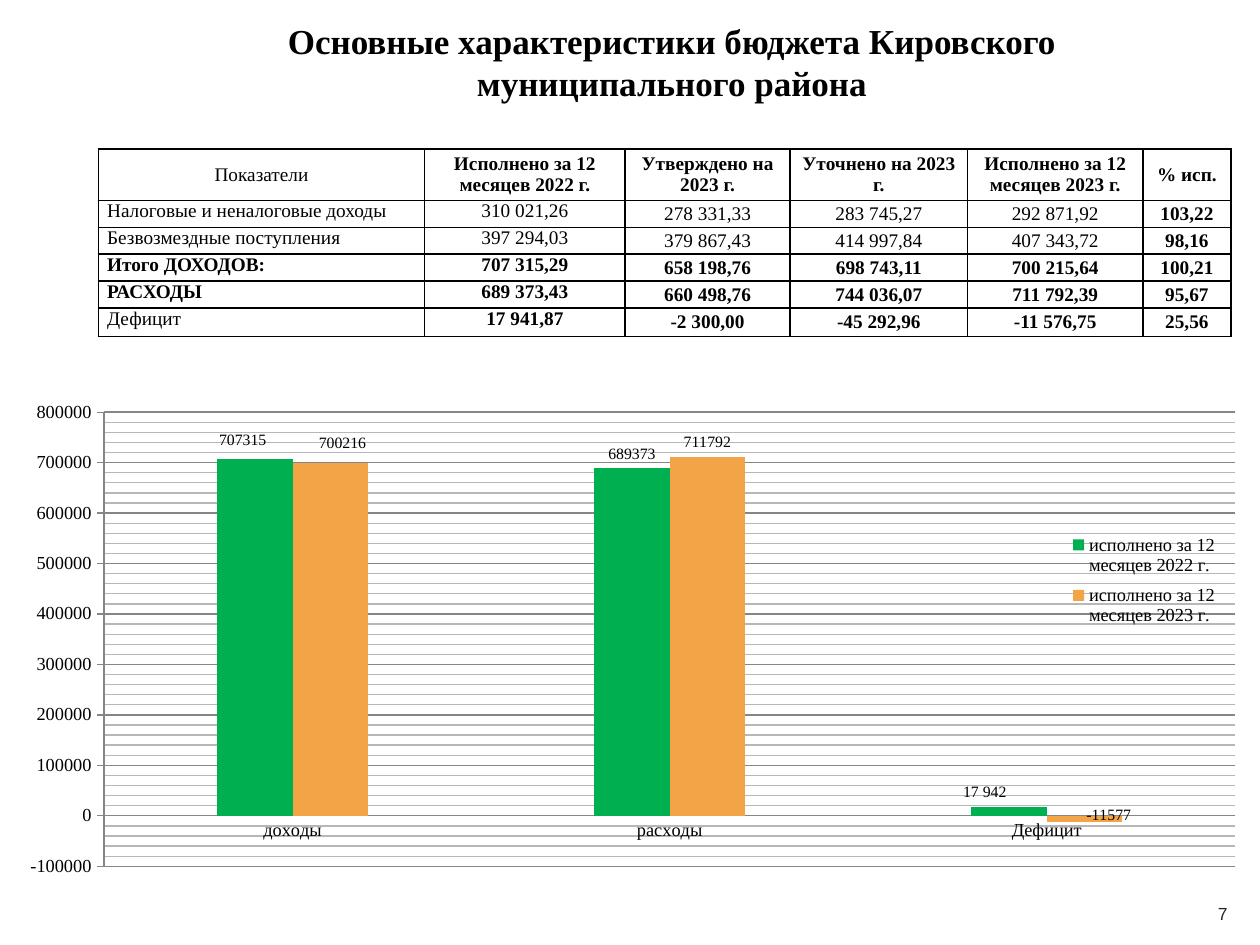
from lxml import etree
from pptx import Presentation
from pptx.chart.data import CategoryChartData
from pptx.dml.color import RGBColor
from pptx.enum.chart import XL_CHART_TYPE, XL_LABEL_POSITION, XL_LEGEND_POSITION, XL_TICK_MARK
from pptx.enum.text import MSO_ANCHOR, MSO_AUTO_SIZE, PP_ALIGN
from pptx.oxml import parse_xml
from pptx.oxml.ns import nsdecls, qn
from pptx.util import Pt

BLACK = RGBColor(0x00, 0x00, 0x00)
DARK = RGBColor(0x26, 0x26, 0x26)
GREEN = RGBColor(0x00, 0xB0, 0x50)
ORANGE = RGBColor(0xF3, 0xA4, 0x47)
MAJOR_GRAY = RGBColor(0x86, 0x86, 0x86)
MINOR_GRAY = RGBColor(0xB7, 0xB7, 0xB7)
SERIF = "Times New Roman"
SANS = "Arial"
CENTER, JUSTIFY = PP_ALIGN.CENTER, PP_ALIGN.JUSTIFY
TOP, MIDDLE = MSO_ANCHOR.TOP, MSO_ANCHOR.MIDDLE
NO_AUTOFIT = MSO_AUTO_SIZE.NONE
CLUSTERED = XL_CHART_TYPE.COLUMN_CLUSTERED
OUTSIDE_END = XL_LABEL_POSITION.OUTSIDE_END
LEGEND_RIGHT = XL_LEGEND_POSITION.RIGHT
TICK_NONE, TICK_CROSS = XL_TICK_MARK.NONE, XL_TICK_MARK.CROSS

COLUMN_WIDTHS = [186.5, 114.5, 94.3, 101.5, 100.1, 50.4]
ROW_HEIGHTS = [29.5, 15.4, 15.4, 15.4, 15.4, 16.3]
ROWS = [
    ["Показатели", "Исполнено за 12 месяцев 2022 г.", "Утверждено на 2023 г.",
     "Уточнено на 2023 г.", "Исполнено за 12 месяцев 2023 г.", "% исп."],
    ["Налоговые и неналоговые доходы", "310 021,26", "278 331,33", "283 745,27", "292 871,92", "103,22"],
    ["Безвозмездные поступления", "397 294,03", "379 867,43", "414 997,84", "407 343,72", "98,16"],
    ["Итого ДОХОДОВ:", "707 315,29", "658 198,76", "698 743,11", "700 215,64", "100,21"],
    ["РАСХОДЫ", "689 373,43", "660 498,76", "744 036,07", "711 792,39", "95,67"],
    ["Дефицит", "17 941,87", "-2 300,00", "-45 292,96", "-11 576,75", "25,56"],
]
BOLD_ROWS = (3, 4)
BOLD_FIGURE_ROWS = (0, 5)

CATEGORIES = ["доходы", "расходы", "Дефицит"]
SERIES = [
    ("исполнено за 12 месяцев 2022 г.", [707315, 689373, 17942], GREEN,
     [(-0.01, -0.01), (0, 0), (-0.02, 0)], {2: "17 942"}),
    ("исполнено за 12 месяцев 2023 г.", [700216, 711792, -11577], ORANGE,
     [(0.01, -0.01), (0, 0), (0.02, -0.04)], {}),
]


def style_font(font, size, color=BLACK, name=SERIF, bold=False):
    font.size = Pt(size)
    font.name = name
    font.bold = bold
    font.color.rgb = color


def write(tf, text, size, align=CENTER, **style):
    p = tf.paragraphs[0]
    p.alignment = align
    r = p.add_run()
    r.text = text
    style_font(r.font, size, **style)


def add_title(s, text):
    sp = s.shapes.title
    sp.left, sp.top, sp.width, sp.height = Pt(87), Pt(0), Pt(594), Pt(70)
    tf = sp.text_frame
    tf.auto_size = NO_AUTOFIT
    tf.word_wrap = True
    tf.vertical_anchor = MIDDLE
    write(tf, text, 20, bold=True)


def add_page_number(s, text):
    tf = s.shapes.add_textbox(Pt(680.4), Pt(507.6), Pt(36.7), Pt(28.8)).text_frame
    tf.word_wrap = True
    tf.vertical_anchor = MIDDLE
    write(tf, text, 10, color=DARK, name=SANS)


def add_borders(cell):
    tcPr = cell._tc.get_or_add_tcPr()
    for side in ("lnL", "lnR", "lnT", "lnB"):
        tcPr.append(parse_xml(
            f'<a:{side} {nsdecls("a")} w="{Pt(1)}"><a:solidFill>'
            f'<a:srgbClr val="{BLACK}"/></a:solidFill></a:{side}>'))


def is_bold(row, col):
    return row in BOLD_ROWS or col == 5 or (row in BOLD_FIGURE_ROWS and col > 0)


def add_budget_table(s):
    table = s.shapes.add_table(len(ROWS), len(COLUMN_WIDTHS), Pt(56.2), Pt(85),
                               Pt(sum(COLUMN_WIDTHS)), Pt(sum(ROW_HEIGHTS))).table
    table.first_row = table.horz_banding = False
    for column, width in zip(table.columns, COLUMN_WIDTHS):
        column.width = Pt(width)
    for i, (height, values) in enumerate(zip(ROW_HEIGHTS, ROWS)):
        table.rows[i].height = Pt(height)
        for j, text in enumerate(values):
            cell = table.cell(i, j)
            cell.margin_left = cell.margin_right = Pt(5)
            cell.margin_top = cell.margin_bottom = Pt(0)
            cell.vertical_anchor = TOP if i > 0 and j < 2 else MIDDLE
            add_borders(cell)
            cell.fill.background()
            align = JUSTIFY if i > 0 and j == 0 else CENTER
            write(cell.text_frame, text, 11, align, bold=is_bold(i, j))


def set_layout(parent, index, inner=False, **places):
    for old in parent.findall(qn("c:layout")):
        parent.remove(old)
    layout = etree.Element(qn("c:layout"))
    manual = etree.SubElement(layout, qn("c:manualLayout"))
    if inner:
        etree.SubElement(manual, qn("c:layoutTarget")).set("val", "inner")
    if "w" in places:
        for mode in ("xMode", "yMode"):
            etree.SubElement(manual, qn(f"c:{mode}")).set("val", "edge")
    for name, value in places.items():
        etree.SubElement(manual, qn(f"c:{name}")).set("val", str(value))
    parent.insert(index, layout)


def format_series(series, color, offsets, texts):
    series.format.fill.solid()
    series.format.fill.fore_color.rgb = color
    series.invert_if_negative = False
    labels = series.data_labels
    labels.show_value = True
    labels.number_format = "0"
    labels.number_format_is_linked = False
    labels.position = OUTSIDE_END
    style_font(labels.font, 9)
    for i in range(len(offsets)):
        label = series.points[i].data_label
        if i in texts:
            write(label.text_frame, texts[i], 9)
        else:
            style_font(label.font, 9)
        label.position = OUTSIDE_END
    for dLbl, (x, y) in zip(labels._element.findall(qn("c:dLbl")), offsets):
        if x or y:
            set_layout(dLbl, 1, x=x, y=y)


def format_line(line, color):
    line.color.rgb = color
    line.width = Pt(0.75)


def format_minor_gridlines(axis):
    gridlines = axis._element.find(qn("c:minorGridlines"))
    gridlines.append(parse_xml(
        f'<c:spPr {nsdecls("c", "a")}><a:ln w="{Pt(0.75)}"><a:solidFill>'
        f'<a:srgbClr val="{MINOR_GRAY}"/></a:solidFill></a:ln></c:spPr>'))


def format_axes(chart):
    category, value = chart.category_axis, chart.value_axis
    category.major_tick_mark = TICK_NONE
    value.major_tick_mark = TICK_CROSS
    value.minimum_scale, value.maximum_scale = -100000, 800000
    value.major_unit, value.minor_unit = 100000, 20000
    value.has_major_gridlines = value.has_minor_gridlines = True
    format_line(value.major_gridlines.format.line, MAJOR_GRAY)
    format_minor_gridlines(value)
    for axis in (category, value):
        axis.minor_tick_mark = TICK_NONE
        format_line(axis.format.line, MAJOR_GRAY)
        style_font(axis.tick_labels.font, 10.5)


def add_budget_chart(s):
    data = CategoryChartData()
    data.categories = CATEGORIES
    for name, values, *_ in SERIES:
        data.add_series(name, values)
    chart = s.shapes.add_chart(CLUSTERED, Pt(10.8), Pt(223.9), Pt(695.5), Pt(291.6), data).chart
    chart.has_title = False
    style_font(chart.font, 10.5)
    plot = chart.plots[0]
    plot.vary_by_categories = False
    plot.gap_width = 300
    plot.overlap = 0
    for series, (_, _, *formatting) in zip(plot.series, SERIES):
        format_series(series, *formatting)
    format_axes(chart)
    chart.has_legend = True
    legend = chart.legend
    legend.position = LEGEND_RIGHT
    legend.include_in_layout = False
    style_font(legend.font, 10.5)
    set_layout(legend._element, 1, x=0.86, y=0.26, w=0.13, h=0.22)
    set_layout(plot._element.getparent(), 0, inner=True, x=0.07, y=0.04, w=0.93, h=0.89)


def main():
    prs = Presentation()
    prs.slide_width, prs.slide_height = Pt(720), Pt(540)
    s = prs.slides.add_slide(prs.slide_layouts[5])
    add_budget_chart(s)
    add_page_number(s, "7")
    add_title(s, "Основные характеристики бюджета Кировского муниципального района")
    add_budget_table(s)
    prs.save("out.pptx")


if __name__ == "__main__":
    main()
